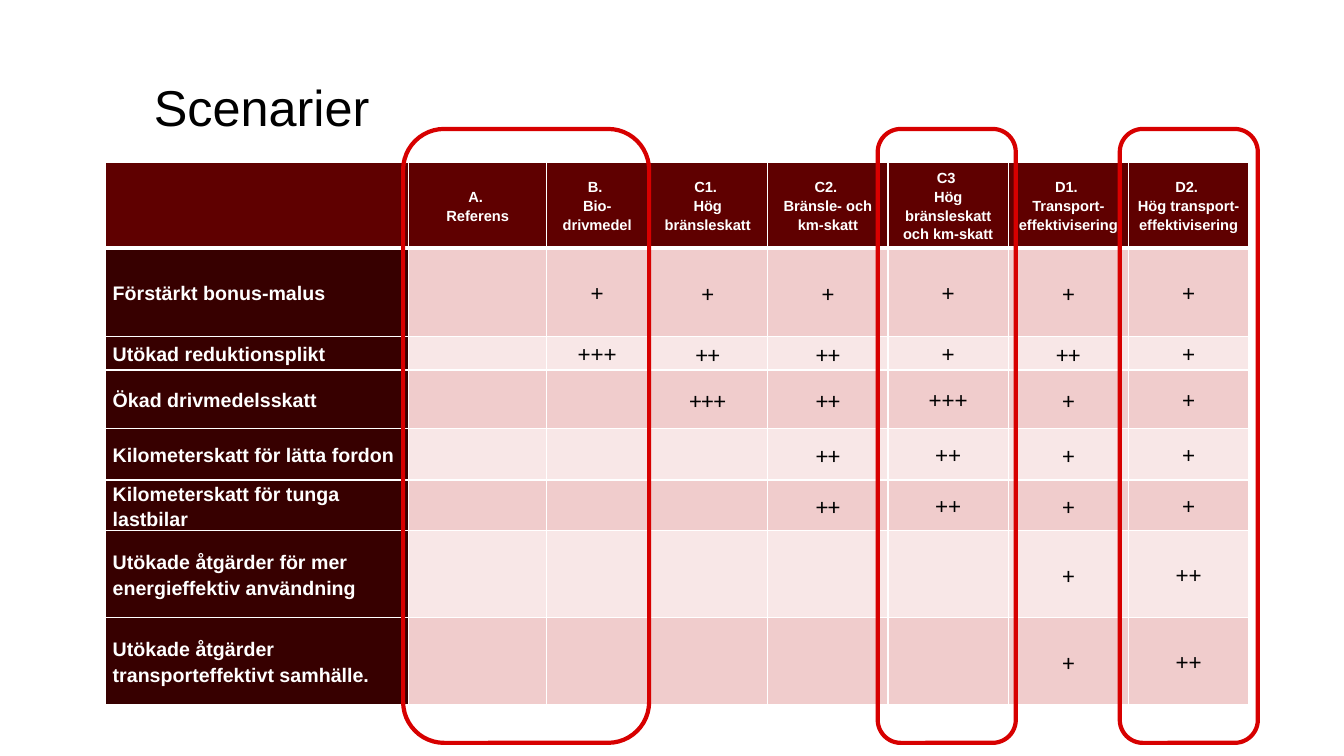
from lxml import etree
from pptx import Presentation
from pptx.dml.color import RGBColor
from pptx.enum.shapes import MSO_SHAPE
from pptx.enum.text import MSO_ANCHOR, MSO_AUTO_SIZE, PP_ALIGN
from pptx.oxml.ns import qn
from pptx.util import Cm, Pt

ROUNDED = MSO_SHAPE.ROUNDED_RECTANGLE
MIDDLE = MSO_ANCHOR.MIDDLE
LEFT, CENTER = PP_ALIGN.LEFT, PP_ALIGN.CENTER

WHITE = RGBColor(0xFF, 0xFF, 0xFF)
BLACK = RGBColor(0x00, 0x00, 0x00)
HEADER_RED = RGBColor(0x5F, 0x00, 0x00)
LABEL_RED = RGBColor(0x37, 0x00, 0x00)
ROW_FILLS = RGBColor(0xF0, 0xCC, 0xCC), RGBColor(0xF8, 0xE7, 0xE7)
MARKER_RED = RGBColor(0xD7, 0x00, 0x00)

SCENARIOS = [
    "",
    "A. \nReferens",
    "B. \nBio-drivmedel",
    "C1. \nHög bränsleskatt",
    "C2. \nBränsle- och km-skatt",
    "C3 \nHög bränsleskatt och km-skatt",
    "D1. \nTransport-effektivisering",
    "D2. \nHög transport-effektivisering",
]
MEASURES = [
    ("Förstärkt bonus-malus", "", "+", "+", "+", "+", "+", "+"),
    ("Utökad reduktionsplikt", "", "+++", "++", "++", "+", "++", "+"),
    ("Ökad drivmedelsskatt", "", "", "+++", "++", "+++", "+", "+"),
    ("Kilometerskatt för lätta fordon", "", "", "", "++", "++", "+", "+"),
    ("Kilometerskatt för tunga lastbilar", "", "", "", "++", "++", "+", "+"),
    ("Utökade åtgärder för mer energieffektiv användning", "", "", "", "", "", "+", "++"),
    ("Utökade åtgärder transporteffektivt samhälle.", "", "", "", "", "", "+", "++"),
]
COLUMN_WIDTHS = [7.65, 3.48, 2.54] + [3.03] * 5
ROW_HEIGHTS = [2.15, 2.23, 0.79, 1.47, 1.3, 1.25, 2.19, 2.19]
CALIBRI_COLUMNS = {3, 4, 6}


def write(frame, text, size, color=BLACK, font="Arial", bold=False, align=LEFT, spacing=None):
    frame.text = text
    for paragraph in frame.paragraphs:
        paragraph.alignment = align
        paragraph.line_spacing = spacing
        paragraph.font.size = Pt(size)
        for run in paragraph.runs:
            run.font.size = Pt(size)
            run.font.name = font
            run.font.bold = bold
            run.font.color.rgb = color


def add_borders(cell, bottom_width):
    properties = cell._tc.get_or_add_tcPr()
    for side, width in (("lnL", 1), ("lnR", 1), ("lnT", 1), ("lnB", bottom_width)):
        border = etree.SubElement(properties, qn(f"a:{side}"), w=str(Pt(width)))
        fill = etree.SubElement(border, qn("a:solidFill"))
        etree.SubElement(fill, qn("a:srgbClr"), val=str(WHITE))


presentation = Presentation()
presentation.slide_width = Cm(33.87)
presentation.slide_height = Cm(19.05)
slide = presentation.slides.add_slide(presentation.slide_layouts[6])

rows = [SCENARIOS, *MEASURES]
scenario_table = slide.shapes.add_table(
    len(rows), len(SCENARIOS), Cm(2.65), Cm(4.1),
    Cm(sum(COLUMN_WIDTHS)), Cm(sum(ROW_HEIGHTS))).table
for column, width in zip(scenario_table.columns, COLUMN_WIDTHS):
    column.width = Cm(width)
for row, height in zip(scenario_table.rows, ROW_HEIGHTS):
    row.height = Cm(height)

for r, texts in enumerate(rows):
    for c, text in enumerate(texts):
        cell = scenario_table.cell(r, c)
        cell.vertical_anchor = MIDDLE
        cell.margin_left = cell.margin_right = Cm(0.19)
        cell.margin_top = cell.margin_bottom = 0
        add_borders(cell, 3 if r == 0 else 1)
        if r == 0:
            background = HEADER_RED
            style = dict(size=10.5, color=WHITE, bold=True, align=CENTER)
        elif c == 0:
            background = LABEL_RED
            style = dict(size=14, color=WHITE, bold=True)
        else:
            background = ROW_FILLS[(r - 1) % 2]
            style = dict(size=16, align=CENTER)
            if c in CALIBRI_COLUMNS:
                style.update(size=17, font="Calibri")
        cell.fill.solid()
        cell.fill.fore_color.rgb = background
        write(cell.text_frame, text, spacing=1.15, **style)

heading = slide.shapes.add_textbox(Cm(3.63), Cm(1.8), Cm(6), Cm(1.8)).text_frame
heading.word_wrap = False
heading.auto_size = MSO_AUTO_SIZE.SHAPE_TO_FIT_TEXT
write(heading, "Scenarier", 36)

for left, width in ((10.16, 6.2), (22.12, 3.48), (28.22, 3.48)):
    marker = slide.shapes.add_shape(ROUNDED, Cm(left), Cm(3.25), Cm(width), Cm(15.47))
    marker.shadow.inherit = False
    marker.fill.background()
    marker.line.color.rgb = MARKER_RED
    marker.line.width = Pt(3)

presentation.save("out.pptx")
